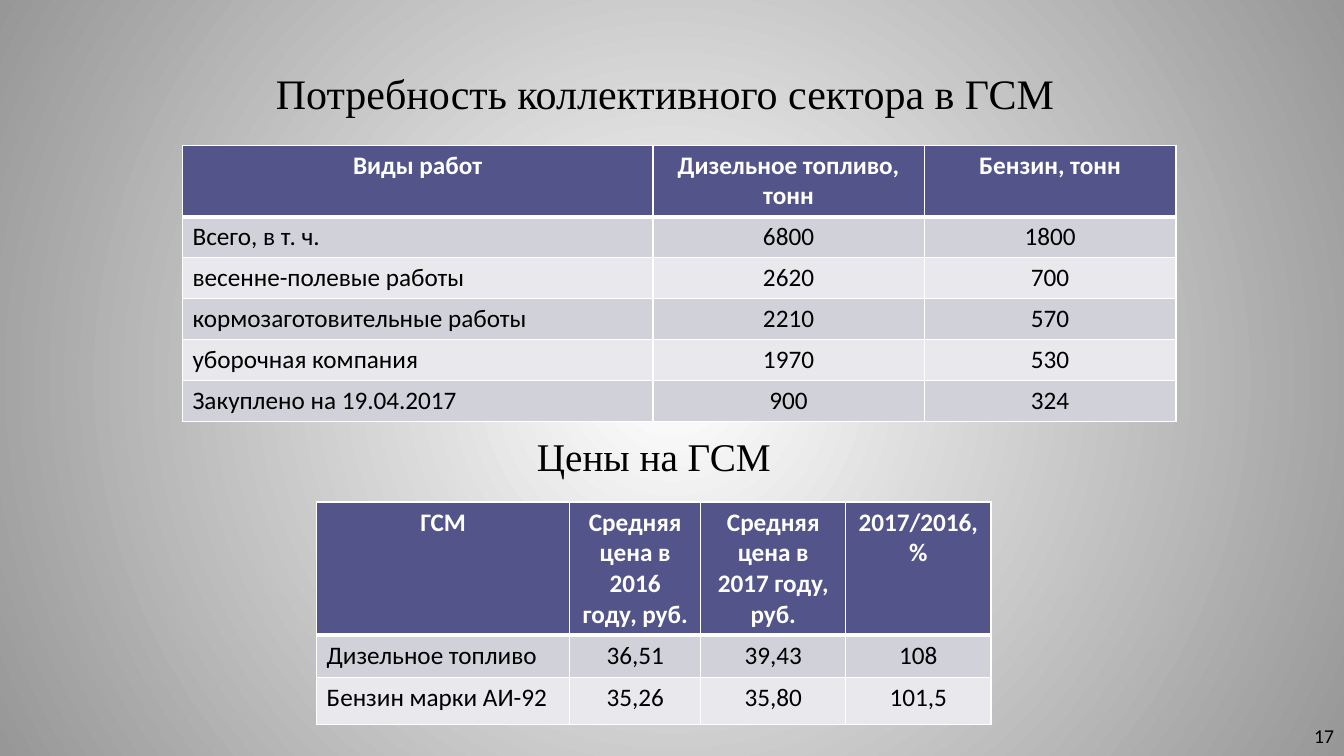
from dataclasses import dataclass

from lxml.etree import SubElement
from pptx import Presentation
from pptx.dml.color import RGBColor
from pptx.enum.text import MSO_ANCHOR as Anchor, MSO_AUTO_SIZE as AutoSize, PP_ALIGN as Align
from pptx.oxml.ns import qn
from pptx.util import Inches, Pt

COLORS = {
    "text": "000000", "line": "FFFFFF", "header": "53548A", "header_text": "FFFFFF",
    "odd": "D1D1DA", "even": "E9E9ED", "glow": "FFFFFF", "edge": "979797",
}
WIDTH, HEIGHT = Inches(13.333), Inches(7.5)
TITLE_ONLY = 5


@dataclass(frozen=True)
class Label:
    """Place and size are percentages of the slide."""
    text: str
    left: float
    top: float
    width: float
    height: float
    size: int
    font: str = "Times New Roman"
    align: Align = Align.CENTER
    anchor: Anchor = Anchor.TOP
    space_before: int = 4


@dataclass(frozen=True)
class Grid:
    """Place, columns and rows are percentages of the slide."""
    left: float
    top: float
    columns: tuple[float, ...]
    rows: tuple[float, ...]
    cells: tuple[tuple[str, ...], ...]


TITLE = Label("Потребность коллективного сектора в ГСМ", 14.25, 8.27, 70.5, 7.47, 30)
LABELS = (
    Label("Цены на ГСМ", 30.98, 56.53, 35.33, 7.33, 28),
    Label("17", 76.67, 94.67, 23.33, 5.33, 14, "Calibri", Align.RIGHT, Anchor.MIDDLE, 0),
)
GRIDS = (
    Grid(13.58, 19.2, (35, 20.18, 18.75), (9.47,) + (5.41,) * 5, (
        ("Виды работ", "Дизельное топливо, тонн", "Бензин, тонн"),
        ("Всего, в т. ч.", "6800", "1800"),
        ("весенне-полевые работы", "2620", "700"),
        ("кормозаготовительные работы", "2210", "570"),
        ("уборочная компания", "1970", "530"),
        ("Закуплено на 19.04.2017", "900", "324"),
    )),
    Grid(23.56, 66.4, (18.83, 9.75, 10.8, 10.8), (17.6, 5.6, 6.27), (
        ("ГСМ", "Средняя цена в 2016 году, руб.", "Средняя цена в 2017 году, руб.",
         "2017/2016, %"),
        ("Дизельное топливо", "36,51", "39,43", "108"),
        ("Бензин марки АИ-92", "35,26", "35,80", "101,5"),
    )),
)


def color(name: str) -> RGBColor:
    return RGBColor.from_string(COLORS[name])


def across(percent: float) -> int:
    return round(WIDTH * percent / 100)


def down(percent: float) -> int:
    return round(HEIGHT * percent / 100)


def write(frame, text: str, align: Align, ink: str, space_before: int = 0, **font_format) -> None:
    para = frame.paragraphs[0]
    para.alignment = align
    para.space_before = Pt(space_before)
    span = para.add_run()
    span.text = text
    span.font.color.rgb = color(ink)
    for name, value in font_format.items():
        setattr(span.font, name, value)


def fill_label(box, label: Label) -> None:
    place = {"left": across(label.left), "top": down(label.top),
             "width": across(label.width), "height": down(label.height)}
    for name, value in place.items():
        setattr(box, name, value)
    frame = box.text_frame
    frame_format = {"word_wrap": True, "auto_size": AutoSize.NONE,
                    "vertical_anchor": label.anchor}
    for name, value in frame_format.items():
        setattr(frame, name, value)
    write(frame, label.text, label.align, "text", label.space_before,
          size=Pt(label.size), name=label.font, bold=False)


def add_borders(cell, row: int) -> None:
    """Thin lines all round, with a thick one under the header row."""
    widths = {"lnL": 1, "lnR": 1, "lnT": 3 if row == 1 else 1, "lnB": 3 if row == 0 else 1}
    properties = cell._tc.get_or_add_tcPr()
    for side, width in widths.items():
        line = SubElement(properties, qn(f"a:{side}"), w=str(Pt(width)))
        solid = SubElement(line, qn("a:solidFill"))
        SubElement(solid, qn("a:srgbClr"), val=COLORS["line"])


def add_grid(page, grid: Grid) -> None:
    table = page.shapes.add_table(
        len(grid.rows), len(grid.columns), across(grid.left), down(grid.top),
        across(sum(grid.columns)), down(sum(grid.rows))).table
    for column, width in zip(table.columns, grid.columns):
        column.width = across(width)
    for row, height in zip(table.rows, grid.rows):
        row.height = down(height)
    for row, texts in enumerate(grid.cells):
        header = row == 0
        shade = "header" if header else "odd" if row % 2 else "even"
        for column, text in enumerate(texts):
            cell = table.cell(row, column)
            add_borders(cell, row)
            cell.fill.solid()
            cell.fill.fore_color.rgb = color(shade)
            align = Align.CENTER if header or column else Align.LEFT
            write(cell.text_frame, text, align, "header_text" if header else "text",
                  size=Pt(18), name="Calibri", bold=header)


def paint_background(page) -> None:
    """Circular gradient spreading from the centre of the slide."""
    fill = page.background.fill
    fill.gradient()
    for stop, name in zip(fill.gradient_stops, ("glow", "edge")):
        stop.color.rgb = color(name)
    gradient = page.element.find(f".//{qn('a:gradFill')}")
    gradient.remove(gradient.find(qn("a:lin")))
    circle = SubElement(gradient, qn("a:path"), path="circle")
    SubElement(circle, qn("a:fillToRect"), dict.fromkeys("ltrb", "50000"))


def main() -> None:
    deck = Presentation()
    deck.slide_width, deck.slide_height = WIDTH, HEIGHT
    page = deck.slides.add_slide(deck.slide_layouts[TITLE_ONLY])
    paint_background(page)
    fill_label(page.shapes.title, TITLE)
    for label in LABELS:
        fill_label(page.shapes.add_textbox(0, 0, 0, 0), label)
    for grid in GRIDS:
        add_grid(page, grid)
    deck.save("out.pptx")


if __name__ == "__main__":
    main()
